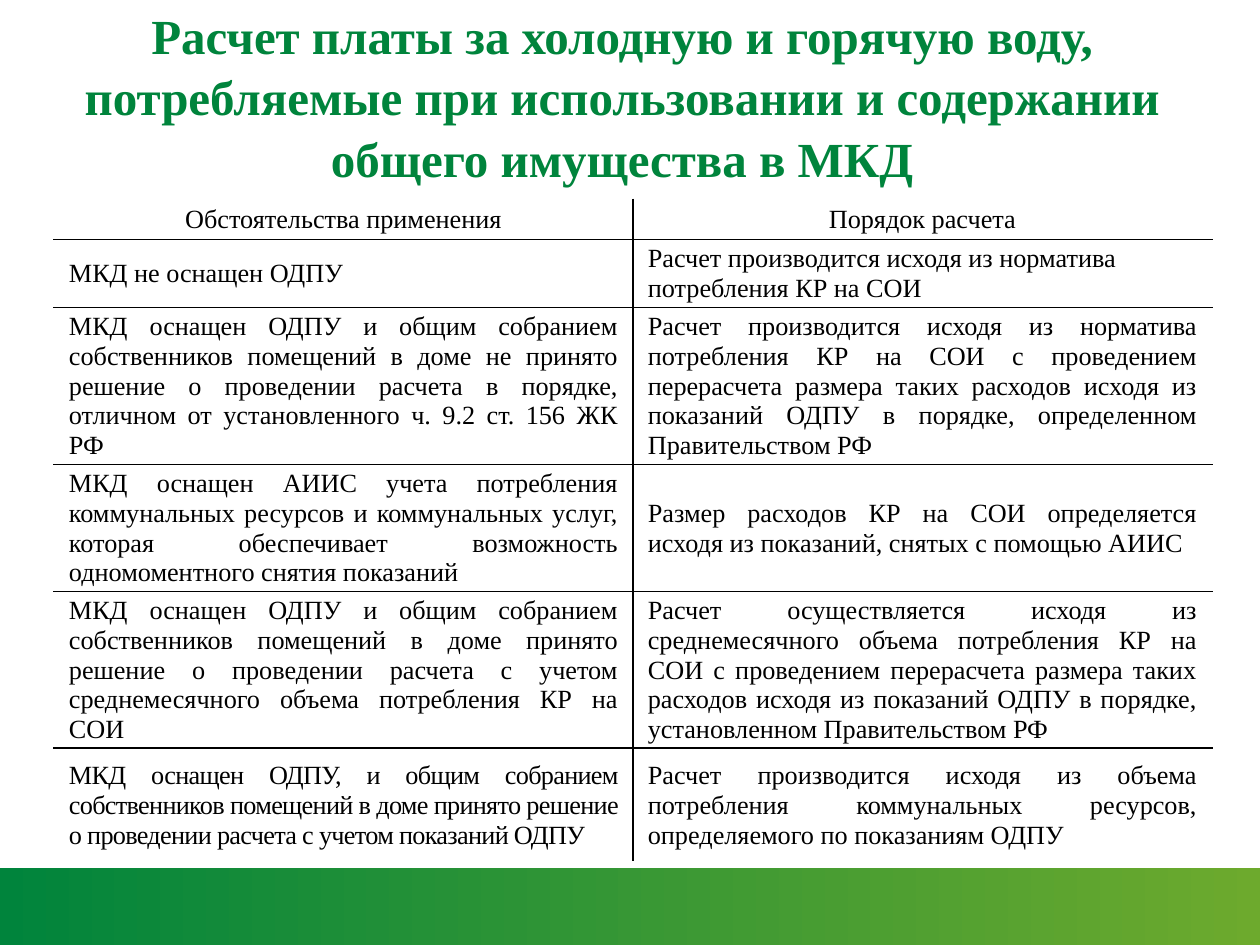
from lxml import etree
from pptx import Presentation
from pptx import util as u
from pptx.dml.color import RGBColor
from pptx.enum import shapes, text
from pptx.oxml.ns import qn

COLORS = {"green": "00843C", "lime": "6DAA2D", "ink": "000000", "paper": "FFFFFF"}
FONT = "Times New Roman"
ALIGN = text.PP_ALIGN

TITLE = ("Расчет платы за холодную и горячую воду, потребляемые при использовании "
         "и содержании общего имущества в МКД")
HEADINGS = ("Обстоятельства применения", "Порядок расчета")
RULES = [
    ("МКД не оснащен ОДПУ",
     "Расчет производится исходя из норматива потребления КР на СОИ"),
    ("МКД оснащен ОДПУ и общим собранием собственников помещений в доме не принято "
     "решение о проведении расчета в порядке, отличном от установленного "
     "ч. 9.2 ст. 156 ЖК РФ",
     "Расчет производится исходя из норматива потребления КР на СОИ с проведением "
     "перерасчета размера таких расходов исходя из показаний ОДПУ в порядке, "
     "определенном Правительством РФ"),
    ("МКД оснащен АИИС учета потребления коммунальных ресурсов и коммунальных услуг, "
     "которая обеспечивает возможность одномоментного снятия показаний",
     "Размер расходов КР на СОИ определяется исходя из показаний, снятых с помощью АИИС"),
    ("МКД оснащен ОДПУ и общим собранием собственников помещений в доме принято решение "
     "о проведении расчета с учетом среднемесячного объема потребления КР на СОИ",
     "Расчет осуществляется исходя из среднемесячного объема потребления КР на СОИ "
     "с проведением перерасчета размера таких расходов исходя из показаний ОДПУ "
     "в порядке, установленном Правительством РФ"),
    ("МКД оснащен ОДПУ, и общим собранием собственников помещений в доме принято решение "
     "о проведении расчета с учетом показаний ОДПУ",
     "Расчет производится исходя из объема потребления коммунальных ресурсов, "
     "определяемого по показаниям ОДПУ"),
]
ROW_HEIGHTS = (0.81, 1.37, 3.15, 2.55, 3.15, 2.29)


def rgb(name):
    return RGBColor.from_string(COLORS[name])


class SlideBuilder:
    def __init__(self, slide):
        self.slide = slide

    def add_words(self, paragraph, words, size, color, align, bold=False, spacing=None):
        paragraph.alignment = align
        paragraph.line_spacing = spacing
        run = paragraph.add_run()
        run.text = words
        run.font.name, run.font.size, run.font.bold = FONT, u.Pt(size), bold
        run.font.color.rgb = rgb(color)
        return run

    def title(self, words, *box):
        frame = self.slide.shapes.add_textbox(*map(u.Cm, box)).text_frame
        frame.word_wrap = True
        frame.vertical_anchor = text.MSO_ANCHOR.MIDDLE
        self.add_words(frame.paragraphs[0], words, 28, "green", ALIGN.CENTER, True, 1.04)

    def gradient_band(self, start, end, *box):
        band = self.slide.shapes.add_shape(shapes.MSO_SHAPE.RECTANGLE, *map(u.Cm, box))
        band.shadow.inherit = False
        band.line.fill.background()
        band.fill.gradient()
        band.fill.gradient_angle = 0
        for stop, color, position in zip(band.fill.gradient_stops, (start, end), (0, 1)):
            stop.color.rgb = rgb(color)
            stop.position = position

    def borders(self, cell, **sides):
        """Draw 1 pt borders; sides maps L, R, T, B to colour names."""
        properties = cell._tc.get_or_add_tcPr()
        for index, side in enumerate("LRTB"):
            line = etree.Element(qn(f"a:ln{side}"), w=str(u.Pt(1)))
            fill = etree.SubElement(line, qn("a:solidFill"))
            etree.SubElement(fill, qn("a:srgbClr"), val=COLORS[sides[side]])
            properties.insert(index, line)

    def table(self, rows, heights, left, top, width):
        row_count, column_count = len(rows), len(rows[0])
        table = self.slide.shapes.add_table(
            row_count, column_count, u.Cm(left), u.Cm(top),
            u.Cm(width), u.Cm(sum(heights))).table
        table.first_row = table.horz_banding = False
        for row, height in zip(table.rows, heights):
            row.height = u.Cm(height)
        for r, words_in_row in enumerate(rows):
            for c, words in enumerate(words_in_row):
                cell = table.cell(r, c)
                cell.fill.background()
                cell.vertical_anchor = text.MSO_ANCHOR.MIDDLE
                cell.margin_left = cell.margin_right = u.Cm(0.3)
                cell.margin_top = cell.margin_bottom = u.Cm(0.08)
                align = (ALIGN.CENTER, ALIGN.LEFT)[r] if r < 2 else ALIGN.JUSTIFY
                run = self.add_words(cell.text_frame.paragraphs[0], words, 15, "ink", align,
                                     spacing=u.Pt(17) if r else None)
                if (r, c) == (row_count - 1, 0):
                    run.font._element.set("spc", "-40")
                outer = {"L": c == 0, "R": c == column_count - 1,
                         "T": r == 0, "B": r == row_count - 1}
                self.borders(cell, **{side: "paper" if edge else "ink"
                                      for side, edge in outer.items()})


def main():
    presentation = Presentation()
    presentation.slide_width, presentation.slide_height = u.Cm(25.4), u.Cm(19.05)
    builder = SlideBuilder(presentation.slides.add_slide(presentation.slide_layouts[6]))
    builder.title(TITLE, 0.64, 0, 23.8, 3.84)
    builder.gradient_band("green", "lime", 0, 17.5, 25.4, 1.55)
    builder.table([HEADINGS, *RULES], ROW_HEIGHTS, 1.09, 4.02, 23.34)
    presentation.save("out.pptx")


if __name__ == "__main__":
    main()
